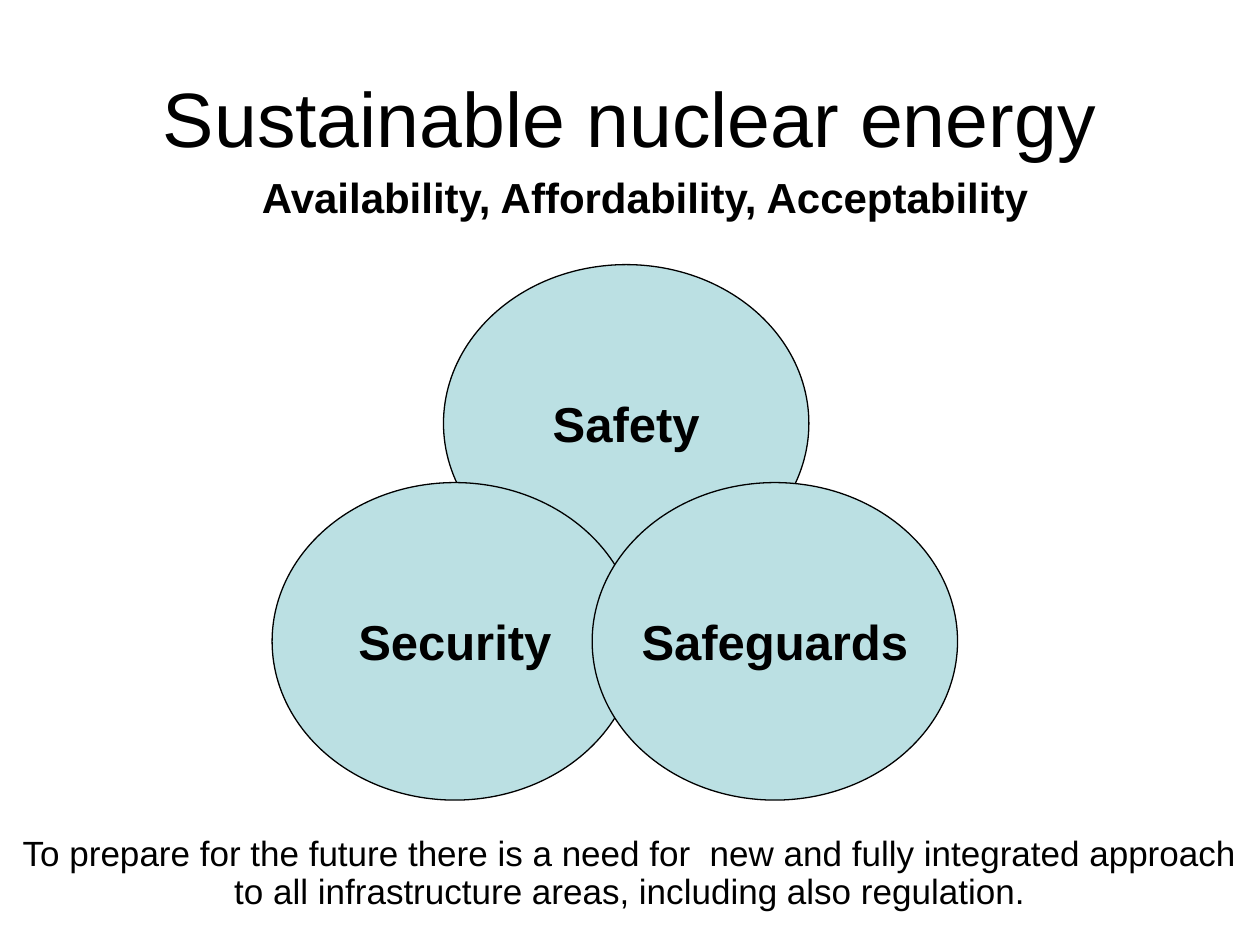
from pptx import Presentation
from pptx.dml.color import RGBColor
from pptx.enum.shapes import MSO_SHAPE as Shape
from pptx.enum.text import MSO_ANCHOR as Anchor, PP_ALIGN as Align
from pptx.util import Inches, Pt

TEXTS = [
    ("Sustainable nuclear energy", (0.5, 0.3, 9, 1.25), Anchor.MIDDLE, 1.0,
     {"size": Pt(44), "bold": False}),
    ("Availability, Affordability, Acceptability", (1.3, 1.31, 7.64, 0.5), Anchor.TOP, 1.0,
     {"size": Pt(24), "bold": True}),
    ("To prepare for the future there is a need for  new and fully integrated approach "
     "to all infrastructure areas, including also regulation.",
     (0, 6.59, 10, 0.7), Anchor.TOP, 0.9, {"size": Pt(20), "bold": False}),
]
PILLARS = [("Safety", 3.52, 2.1), ("Security", 2.16, 3.83), ("Safeguards", 4.7, 3.83)]
PILLAR_SIZE = (2.9, 2.52)
PILLAR_FONT = {"size": Pt(28), "bold": True}
INK = "000000"
PILLAR_FILL = "BBE0E3"


def color(value):
    return RGBColor.from_string(value)


def write(holder, words, anchor, spacing, font_format, wrap=True):
    frame = holder.text_frame
    frame.word_wrap = wrap
    frame.vertical_anchor = anchor
    paragraph = frame.paragraphs[0]
    paragraph.alignment = Align.CENTER
    paragraph.line_spacing = spacing
    run = paragraph.add_run()
    run.text = words
    for name, value in {"name": "Arial", **font_format}.items():
        setattr(run.font, name, value)
    run.font.color.rgb = color(INK)


deck = Presentation()
deck.slide_width, deck.slide_height = Inches(10), Inches(7.5)
slide = deck.slides.add_slide(deck.slide_layouts[6])

for label, left, top in PILLARS:
    pillar = slide.shapes.add_shape(Shape.OVAL, *map(Inches, (left, top, *PILLAR_SIZE)))
    pillar.shadow.inherit = False
    pillar.fill.solid()
    pillar.fill.fore_color.rgb = color(PILLAR_FILL)
    pillar.line.color.rgb = color(INK)
    pillar.line.width = Pt(0.75)
    write(pillar, label, Anchor.MIDDLE, 1.0, PILLAR_FONT, wrap=False)

for words, place, anchor, spacing, font_format in TEXTS:
    write(slide.shapes.add_textbox(*map(Inches, place)), words, anchor, spacing, font_format)

deck.save("out.pptx")
